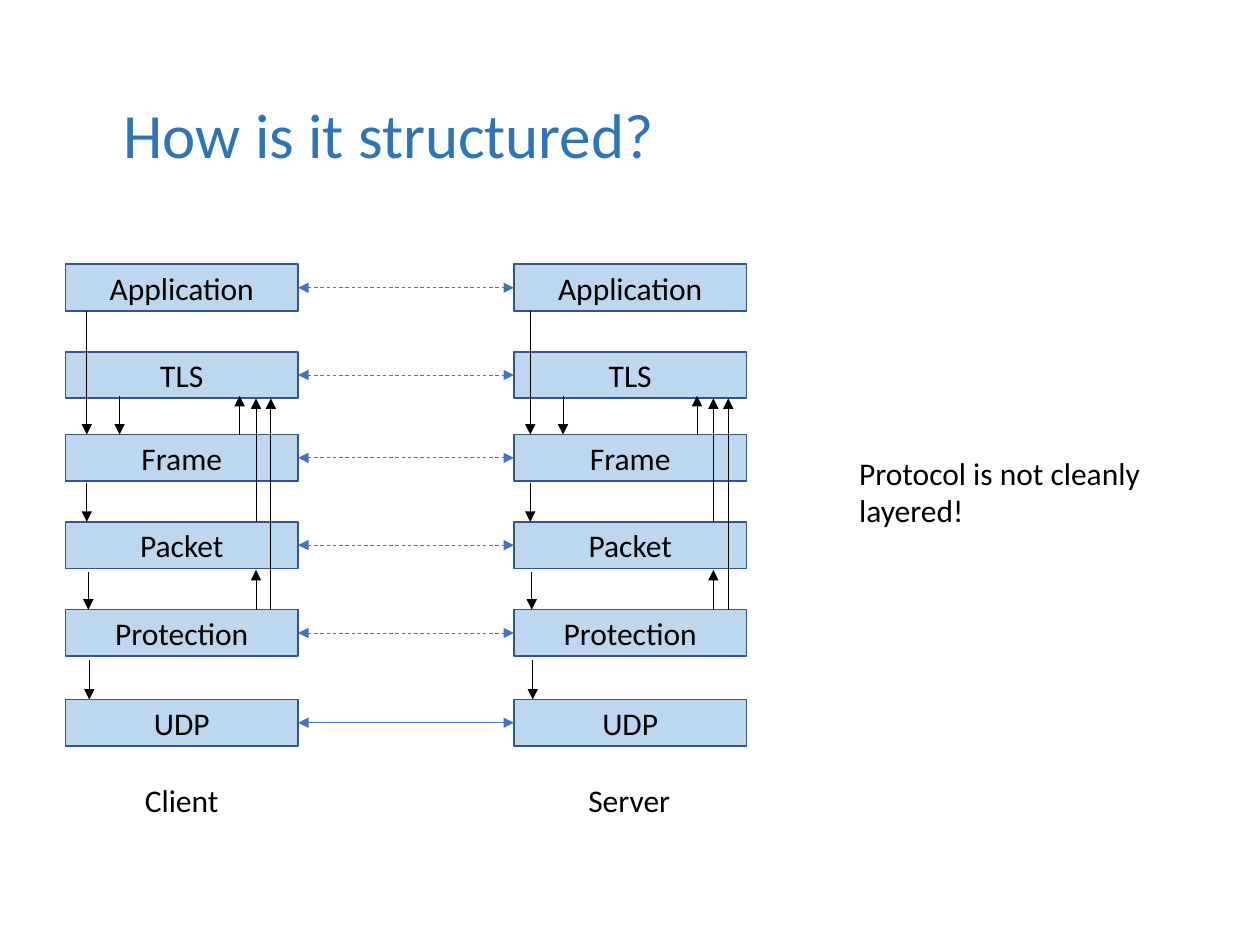
from lxml import etree
from pptx import Presentation
from pptx.dml.color import RGBColor
from pptx.enum import dml, shapes, text
from pptx.oxml.ns import qn
from pptx.util import Cm, Pt

TITLE_BLUE = RGBColor(0x2E, 0x75, 0xB6)
BOX_FILL = RGBColor(0xBD, 0xD7, 0xEE)
BOX_LINE = RGBColor(0x32, 0x54, 0x91)
PEER_BLUE = RGBColor(0x44, 0x72, 0xC4)
BLACK = RGBColor(0, 0, 0)

# Layer names with the top of each box, in cm
LAYERS = {
    "Application": 5.33,
    "TLS": 7.09,
    "Frame": 8.76,
    "Packet": 10.52,
    "Protection": 12.29,
    "UDP": 14.1,
}
BOX_WIDTH, BOX_HEIGHT = 4.69, 0.94
CLIENT_LEFT, SERVER_LEFT = 1.32, 10.36

# Upper layer, lower layer, x on the client side, distance below the upper box
DOWN_ARROWS = [
    ("Application", "Frame", 1.75, 0),
    ("TLS", "Frame", 2.41, -0.05),
    ("Frame", "Packet", 1.75, 0.03),
    ("Packet", "Protection", 1.78, 0.07),
    ("Protection", "UDP", 1.8, 0.08),
]
UP_ARROWS = [
    ("TLS", "Protection", 5.46, 0),
    ("TLS", "Frame", 4.83, -0.05),
    ("TLS", "Packet", 5.16, 0),
    ("Packet", "Protection", 5.16, 0.03),
]
DOWN_SHIFT, UP_SHIFT = 8.94, 9.22  # from the client side to the server side


def format_text(shape, content, size=18, color=BLACK, align=text.PP_ALIGN.LEFT):
    shape.text_frame.text = content
    paragraph = shape.text_frame.paragraphs[0]
    paragraph.alignment = align
    paragraph.font.name = "Calibri"
    paragraph.font.size = Pt(size)
    paragraph.font.color.rgb = color


def set_title(slide, content):
    title = slide.shapes.title
    title.left, title.top, title.width, title.height = Cm(2.24), Cm(1.8), Cm(21.5), Cm(1.8)
    format_text(title, content, 36, TITLE_BLUE)
    title.text_frame.vertical_anchor = text.MSO_ANCHOR.TOP
    title.text_frame.auto_size = text.MSO_AUTO_SIZE.SHAPE_TO_FIT_TEXT


def add_label(slide, content, left, top, width, height, wrap=False):
    label = slide.shapes.add_textbox(Cm(left), Cm(top), Cm(width), Cm(height))
    label.text_frame.word_wrap = wrap
    label.text_frame.auto_size = text.MSO_AUTO_SIZE.SHAPE_TO_FIT_TEXT
    format_text(label, content)


def add_layer_box(slide, name, left):
    box = slide.shapes.add_shape(
        shapes.MSO_SHAPE.RECTANGLE,
        Cm(left), Cm(LAYERS[name]), Cm(BOX_WIDTH), Cm(BOX_HEIGHT),
    )
    box.shadow.inherit = False
    box.fill.solid()
    box.fill.fore_color.rgb = BOX_FILL
    box.line.color.rgb = BOX_LINE
    box.line.width = Pt(1)
    box.text_frame.vertical_anchor = text.MSO_ANCHOR.MIDDLE
    format_text(box, name, align=text.PP_ALIGN.CENTER)
    return box


def add_arrow(slide, start, end, color=BLACK, dashed=False, both_ends=False):
    """Draw an arrow between two (x, y) points in cm, with a head at the end or at both ends."""
    arrow = slide.shapes.add_connector(
        shapes.MSO_CONNECTOR.STRAIGHT, *(Cm(value) for value in (*start, *end))
    )
    arrow.line.color.rgb = color
    arrow.line.width = Pt(0.5)
    if dashed:
        arrow.line.dash_style = dml.MSO_LINE.DASH
    line = arrow.line._get_or_add_ln()
    for tag in ("a:headEnd", "a:tailEnd") if both_ends else ("a:tailEnd",):
        etree.SubElement(line, qn(tag), type="triangle")
    etree.SubElement(arrow._element.spPr, qn("a:effectLst"))
    return arrow


def add_layer(slide, name):
    """Add one layer's box on each side and the arrow that joins them."""
    client = add_layer_box(slide, name, CLIENT_LEFT)
    server = add_layer_box(slide, name, SERVER_LEFT)
    middle = LAYERS[name] + BOX_HEIGHT / 2
    arrow = add_arrow(
        slide, (CLIENT_LEFT + BOX_WIDTH, middle), (SERVER_LEFT, middle),
        PEER_BLUE, dashed=name != "UDP", both_ends=True,
    )
    arrow.begin_connect(client, 3)
    arrow.end_connect(server, 1)


def add_flow(slide, arrows, shift, upward=False):
    for upper, lower, x, gap in arrows:
        for side_x in (x, x + shift):
            start = (side_x, LAYERS[upper] + BOX_HEIGHT + gap)
            end = (side_x, LAYERS[lower])
            if upward:
                start, end = end, start
            add_arrow(slide, start, end)


def main():
    presentation = Presentation()
    presentation.slide_width, presentation.slide_height = Cm(25.4), Cm(19.05)
    slide = presentation.slides.add_slide(presentation.slide_layouts[5])
    set_title(slide, "How is it structured?")
    for name in LAYERS:
        add_layer(slide, name)
    add_flow(slide, DOWN_ARROWS, DOWN_SHIFT)
    add_flow(slide, UP_ARROWS, UP_SHIFT, upward=True)
    add_label(slide, "Client", 2.67, 15.62, 2, 1.02)
    add_label(slide, "Server", 11.61, 15.62, 2.18, 1.02)
    add_label(slide, "Protocol is not cleanly layered!", 17.07, 9.02, 6.27, 1.8, wrap=True)
    presentation.save("out.pptx")


if __name__ == "__main__":
    main()
